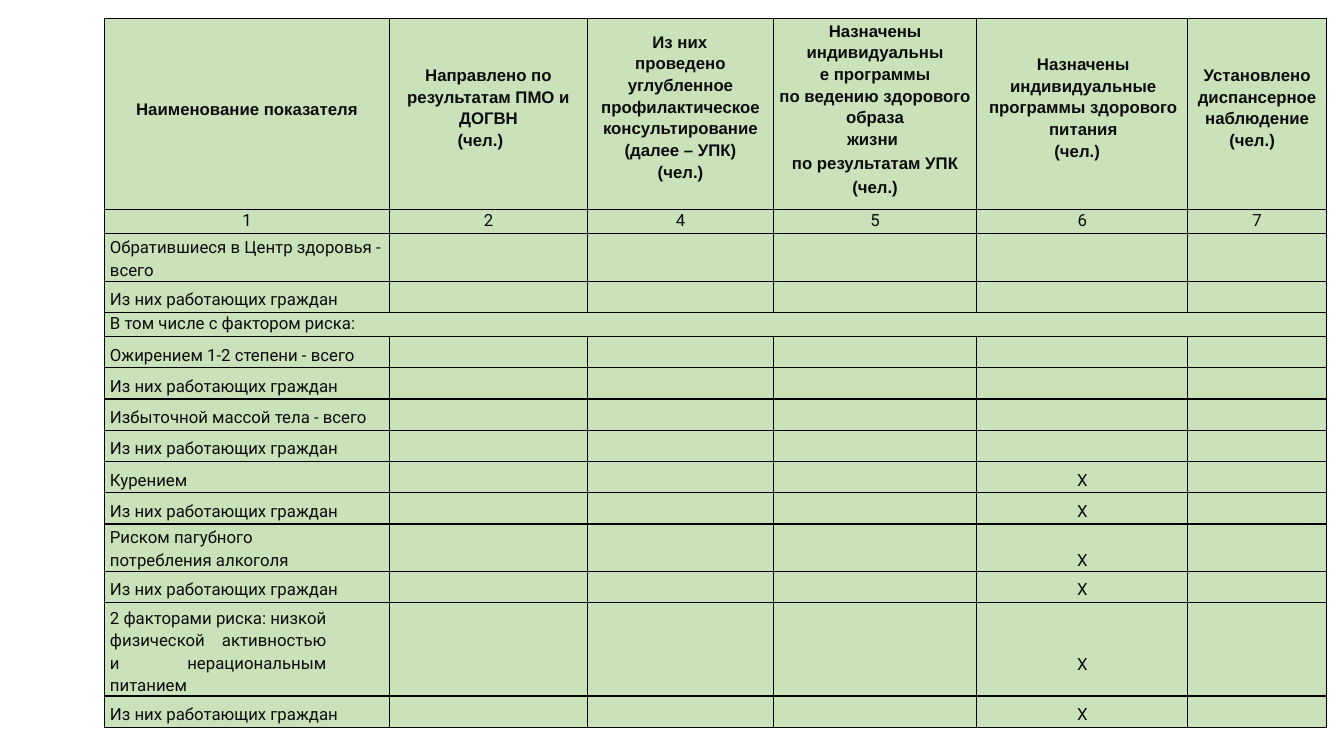
from dataclasses import dataclass

from lxml import etree
from pptx import Presentation, util as u
from pptx.dml.color import RGBColor
from pptx.enum import text
from pptx.oxml.ns import qn

GREEN, INK, BORDER = "CAE2BA", "0C0C0C", "000000"
LEFT, CENTER, JUSTIFY = text.PP_ALIGN.LEFT, text.PP_ALIGN.CENTER, text.PP_ALIGN.JUSTIFY
LOOSE, FIXED = 1.15, u.Pt(16.6)
COLUMNS = [2.82, 1.97, 1.84, 2.02, 2.09, 1.38]
HEADER_HEIGHT, NUMBER_HEIGHT = 1.9, 0.24
NUTRITION_COLUMN = 4


@dataclass
class Line:
    """One paragraph: margins and first-line indent in inches, space before in points."""
    words: str
    align: text.PP_ALIGN = CENTER
    left: float = 0
    right: float = 0
    indent: float = 0
    spacing: float | int = 1.0
    before: float = 0


@dataclass
class Heading:
    top: float
    lines: list[Line]


@dataclass
class Indicator:
    """A body row; cross_top is the inset above its Х, if it has one."""
    label: str
    height: float = 0.31
    top: float = 0.09
    right: float = 0
    align: text.PP_ALIGN = LEFT
    spacing: float | int = 1.0
    cross_top: float | None = None
    spans_table: bool = False


def people(right: float = 0) -> Line:
    return Line("(чел.)", right=right, before=2.1)


HEADINGS = [
    Heading(0.81, [Line("Наименование показателя", LEFT, left=0.31)]),
    Heading(0.45, [Line("Направлено по результатам ПМО и ДОГВН", left=0.17, right=0.17, spacing=LOOSE),
                   people(0.16)]),
    Heading(0.12, [Line("Из них проведено", LEFT, left=0.47, indent=0.17, spacing=LOOSE),
                   Line("углубленное профилактическое консультирование (далее – УПК)\v(чел.)",
                        left=0.1, right=0.1, spacing=LOOSE)]),
    Heading(0.01, [Line("Назначены индивидуальные программы", left=0.29, right=0.29, spacing=LOOSE),
                   Line("по ведению здорового образа", left=0.04, right=0.04, spacing=LOOSE),
                   Line("жизни", right=0.05, before=2.1),
                   Line("по результатам УПК (чел.)", left=0.18, right=0.18, spacing=FIXED, before=0.8)]),
    Heading(0.34, [Line("Назначены индивидуальные программы здорового питания",
                        left=0.1, right=0.08, spacing=LOOSE), people(0.1)]),
    Heading(0.45, [Line("Установлено диспансерное наблюдение", left=0.08, right=0.08, spacing=LOOSE),
                   people(0.1)]),
]
NUMBERS = "124567"
WORKING = "Из них работающих граждан"
INDICATORS = [
    Indicator("Обратившиеся в Центр здоровья - всего", 0.47, 0, spacing=FIXED),
    Indicator(WORKING),
    Indicator("В том числе с фактором риска:", 0.24, 0.01, spans_table=True),
    Indicator("Ожирением 1-2 степени - всего"),
    Indicator(WORKING),
    Indicator("Избыточной массой тела - всего"),
    Indicator(WORKING),
    Indicator("Курением", cross_top=0.09),
    Indicator(WORKING, cross_top=0.09),
    Indicator("Риском пагубного потребления алкоголя", 0.47, 0, 0.6, spacing=FIXED, cross_top=0.27),
    Indicator(WORKING, cross_top=0.09),
    Indicator("2 факторами риска: низкой физической активностью и нерациональным питанием",
              0.75, 0.03, 0.62, JUSTIFY, LOOSE, cross_top=0.52),
    Indicator(WORKING, cross_top=0.09),
]


def rgb(value: str) -> RGBColor:
    return RGBColor.from_string(value)


def style_cell(cell) -> None:
    cell.margin_left = cell.margin_right = cell.margin_top = cell.margin_bottom = 0
    properties = cell._tc.get_or_add_tcPr()
    for side in ("lnL", "lnR", "lnT", "lnB"):
        edge = etree.SubElement(properties, qn(f"a:{side}"), w=str(u.Pt(1)))
        solid = etree.SubElement(edge, qn("a:solidFill"))
        etree.SubElement(solid, qn("a:srgbClr"), val=BORDER)
    cell.fill.solid()
    cell.fill.fore_color.rgb = rgb(GREEN)
    cell.text_frame.paragraphs[0].font.size = u.Pt(12)


def write(cell, lines: list[Line], top: float, font: str = "Roboto", bold: bool = False) -> None:
    cell.margin_top = u.Inches(top)
    frame = cell.text_frame
    for number, line in enumerate(lines):
        paragraph = frame.add_paragraph() if number else frame.paragraphs[0]
        paragraph.text = line.words
        paragraph.alignment = line.align
        paragraph.line_spacing = line.spacing
        if number:
            paragraph.space_before = u.Pt(line.before)
        properties = paragraph._p.get_or_add_pPr()
        for name, inches in (("marL", line.left), ("marR", line.right), ("indent", line.indent)):
            properties.set(name, str(u.Inches(inches)))
        paragraph.font.name = font
        paragraph.font.size = u.Pt(12)
        paragraph.font.bold = bold
        paragraph.font.color.rgb = rgb(INK)


def build_table(slide):
    heights = [HEADER_HEIGHT, NUMBER_HEIGHT] + [item.height for item in INDICATORS]
    table = slide.shapes.add_table(len(heights), len(COLUMNS), u.Inches(1.04), u.Inches(0.18),
                                   u.Inches(sum(COLUMNS)), u.Inches(sum(heights))).table
    table.first_row = table.horz_banding = False
    for column, width in zip(table.columns, COLUMNS):
        column.width = u.Inches(width)
    for row, height in zip(table.rows, heights):
        row.height = u.Inches(height)
    for cell in table.iter_cells():
        style_cell(cell)
    return table


def main() -> None:
    deck = Presentation()
    deck.slide_width, deck.slide_height = u.Inches(13.33), u.Inches(7.5)
    table = build_table(deck.slides.add_slide(deck.slide_layouts[6]))

    for column, (heading, number) in enumerate(zip(HEADINGS, NUMBERS)):
        write(table.cell(0, column), heading.lines, heading.top, "Arial", True)
        write(table.cell(1, column), [Line(number)], 0.01)

    for row, item in enumerate(INDICATORS, start=2):
        label = table.cell(row, 0)
        if item.spans_table:
            label.merge(table.cell(row, len(COLUMNS) - 1))
        write(label, [Line(item.label, item.align, 0.05, item.right, spacing=item.spacing)], item.top)
        if item.cross_top is not None:
            write(table.cell(row, NUTRITION_COLUMN), [Line("Х")], item.cross_top)

    deck.save("out.pptx")


if __name__ == "__main__":
    main()
